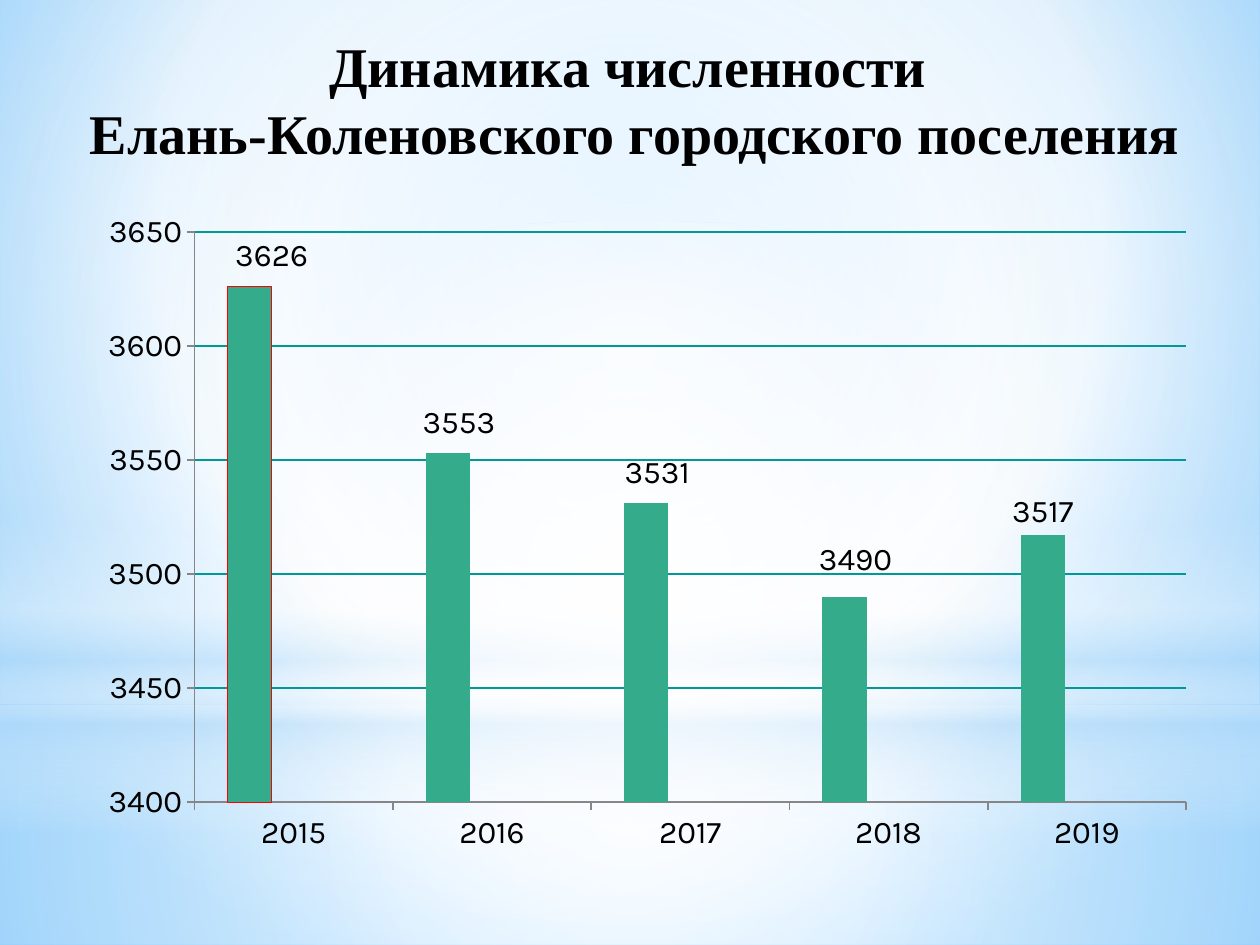
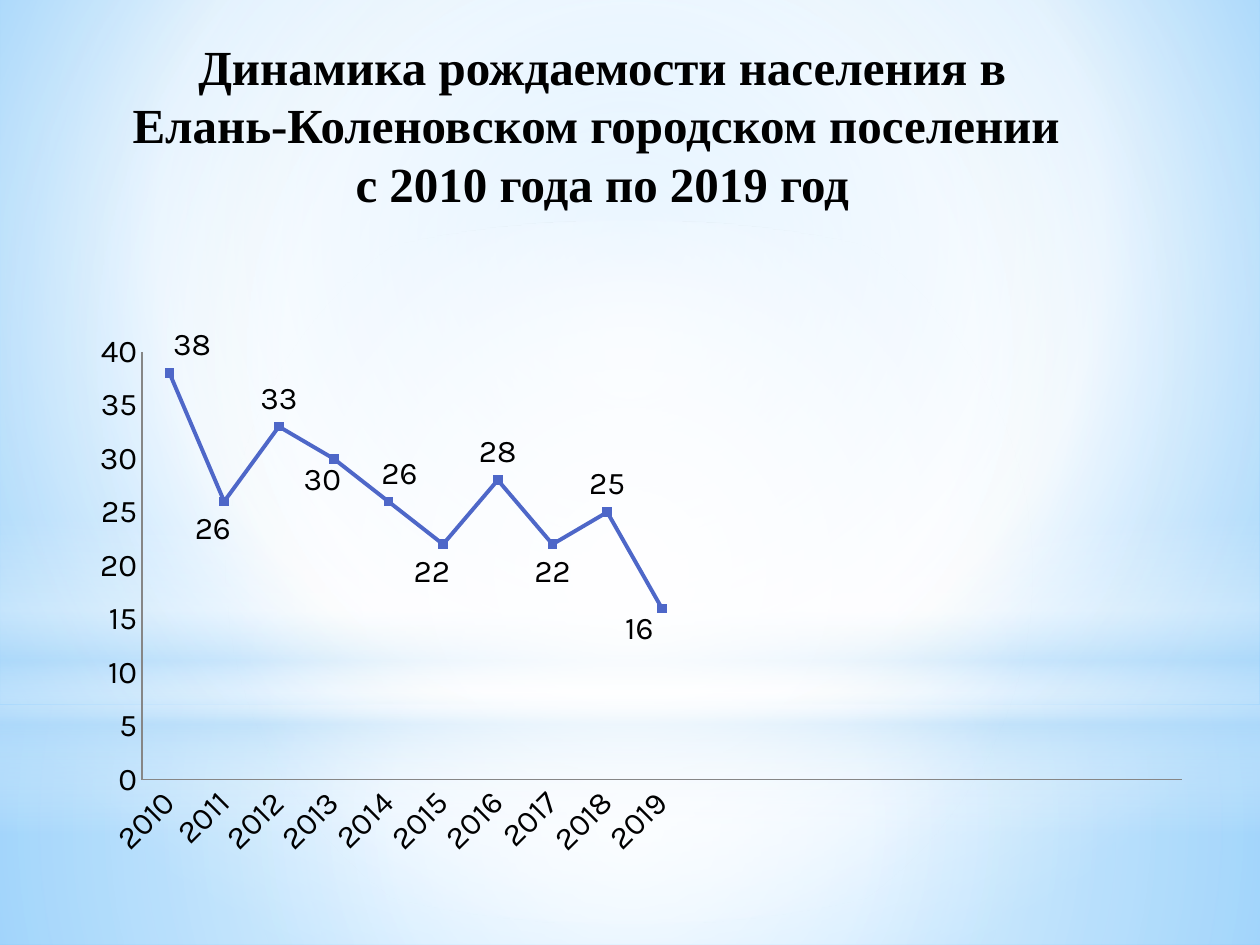
from lxml.etree import SubElement
from pptx import Presentation
from pptx.chart.data import CategoryChartData
from pptx.dml.color import RGBColor
from pptx.enum.chart import (XL_CHART_TYPE, XL_LABEL_POSITION, XL_MARKER_STYLE,
                             XL_TICK_LABEL_POSITION, XL_TICK_MARK)
from pptx.enum.shapes import MSO_SHAPE
from pptx.enum.text import MSO_ANCHOR, PP_ALIGN
from pptx.oxml import parse_xml
from pptx.oxml.ns import nsdecls, qn
from pptx.util import Inches, Pt

COLUMNS, ROWS = 10, 7.5
ABOVE, BELOW = XL_LABEL_POSITION.ABOVE, XL_LABEL_POSITION.BELOW
OUTSIDE = XL_LABEL_POSITION.OUTSIDE_END

# Gradient stops: position, colour, opacity (all in percent)
BACKDROP = [(0, "9ED5FF", 100), (60, "FFFFFF", 100), (100, "5BB9FF", 100)]
FLOOR = [(0, "FFFFFF", 91), (37, "FFFFFF", 76), (100, "B4DCFA", 79)]
WALL = [(0, "FFFFFF", 89), (48, "FFFFFF", 62), (100, "B4DCFA", 79)]
HORIZON = [(0, "FFFFFF", 0), (29, "FFFFFF", 30), (45, "B4DCFA", 40),
           (55, "FFFFFF", 26), (65, "B4DCFA", 60), (100, "FFFFFF", 0)]
GLOW = [(0, "FFFFFF", 100), (56, "FFFFFF", 0)]
CENTRE = (50, 50, 50, 50)


def color(value):
    return RGBColor.from_string(value)


def paint_gradient(holder, stops, focus=None):
    """Swap a solid fill for a circular gradient, or a vertical one without focus."""
    stop_xml = "".join(
        f'<a:gs pos="{position * 1000}"><a:srgbClr val="{value}">'
        f'<a:alpha val="{opacity * 1000}"/></a:srgbClr></a:gs>'
        for position, value, opacity in stops)
    if focus:
        left, top, right, bottom = (share * 1000 for share in focus)
        direction = (f'<a:path path="circle"><a:fillToRect l="{left}" t="{top}" '
                     f'r="{right}" b="{bottom}"/></a:path>')
    else:
        direction = '<a:lin ang="5400000" scaled="0"/>'
    gradient = parse_xml(f'<a:gradFill {nsdecls("a")} rotWithShape="1">'
                         f'<a:gsLst>{stop_xml}</a:gsLst>{direction}</a:gradFill>')
    holder.replace(holder.find(qn("a:solidFill")), gradient)


def add_layout(parent, index, **settings):
    """Insert a manual chart layout as the child at the given index."""
    for old in parent.findall(qn("c:layout")):
        parent.remove(old)
    layout = parse_xml(f'<c:layout {nsdecls("c")}><c:manualLayout/></c:layout>')
    for name, value in settings.items():
        SubElement(layout[0], qn(f"c:{name}")).set("val", str(value))
    parent.insert(index, layout)


class Deck:
    title_font, chart_font = "Times New Roman", "Karla"
    text_color, axis_color = "000000", "868686"

    def __init__(self):
        self.presentation = Presentation()
        self.presentation.slide_width = Inches(COLUMNS)
        self.presentation.slide_height = Inches(ROWS)
        self.slide = None

    def box(self, column, row, columns, rows):
        width = self.presentation.slide_width / COLUMNS
        height = self.presentation.slide_height / ROWS
        return (int(column * width), int(row * height),
                int(columns * width), int(rows * height))

    def add_slide(self):
        self.slide = self.presentation.slides.add_slide(
            self.presentation.slide_layouts[6])
        self.slide.background.fill.solid()
        self.slide.background.fill.fore_color.rgb = color("FFFFFF")
        paint_gradient(self.slide.element.find(".//" + qn("p:bgPr")),
                       BACKDROP, (20, 10, 20, 60))
        self.add_band(MSO_SHAPE.RECTANGLE, (0, 5.59, 10, 1.91), FLOOR, CENTRE)
        self.add_band(MSO_SHAPE.RECTANGLE, (0, 0, 10, 5.58), WALL, CENTRE)
        self.add_band(MSO_SHAPE.RECTANGLE, (0, 4.12, 10, 2.5), HORIZON)
        self.add_band(MSO_SHAPE.OVAL, (0, 1.75, 10, 5.58), GLOW, CENTRE)

    def add_band(self, kind, place, stops, focus=None):
        shape = self.slide.shapes.add_shape(kind, *self.box(*place))
        shape.shadow.inherit = False
        shape.line.fill.background()
        shape.fill.solid()
        paint_gradient(shape.element.spPr, stops, focus)

    def add_title(self, place, lines, size, spacing=None):
        frame = self.slide.shapes.add_textbox(*self.box(*place)).text_frame
        frame.word_wrap = True
        frame.vertical_anchor = MSO_ANCHOR.MIDDLE
        paragraph = frame.paragraphs[0]
        paragraph.alignment = PP_ALIGN.CENTER
        if spacing:
            paragraph.line_spacing = Pt(spacing)
        for number, line in enumerate(lines):
            if number:
                paragraph.add_line_break()
            run = paragraph.add_run()
            run.text = line
            run.font.name = self.title_font
            run.font.size = Pt(size)
            run.font.bold = True
            run.font.color.rgb = color(self.text_color)

    def add_chart(self, kind, place, categories, series, plot_area, scale,
                  tick_mark, axis_width):
        data = CategoryChartData()
        data.categories = categories
        for name, values in series:
            data.add_series(name, values)
        chart = self.slide.shapes.add_chart(kind, *self.box(*place), data).chart
        chart.has_title = chart.has_legend = False
        chart.font.name = self.chart_font
        chart.font.size = Pt(18)
        chart.font.color.rgb = color(self.text_color)
        chart.plots[0].vary_by_categories = False

        # Axes
        for axis in (chart.category_axis, chart.value_axis):
            axis.has_major_gridlines = False
            axis.major_tick_mark = tick_mark
            axis.minor_tick_mark = XL_TICK_MARK.NONE
            axis.format.line.color.rgb = color(self.axis_color)
            axis.format.line.width = Pt(axis_width)
        axis = chart.value_axis
        axis.minimum_scale, axis.maximum_scale, axis.major_unit = scale

        # Inner plot area, as shares of the chart
        left, top, width, height = plot_area
        add_layout(chart.element.find(".//" + qn("c:plotArea")), 0,
                   layoutTarget="inner", xMode="edge", yMode="edge",
                   x=left, y=top, w=width, h=height)
        return chart

    def add_value_labels(self, chart, labels):
        """Each label is a position and a shift in shares of the chart."""
        series = chart.plots[0].series[0]
        series.data_labels.show_value = True
        for number, (position, _, _) in enumerate(labels):
            series.points[number].data_label.position = position
        label_elements = chart.element.findall(".//" + qn("c:dLbl"))
        for element, (_, right, down) in zip(label_elements, labels):
            if right or down:
                add_layout(element, 1, x=right, y=down)
        for leader in chart.element.findall(".//" + qn("c:showLeaderLines")):
            leader.set("val", "0")


def add_population_slide(deck):
    deck.add_slide()
    deck.add_title((0.39, 0.16, 9.3, 1.25),
                   ["Динамика численности ",
                    "Елань-Коленовского городского поселения"], 32)
    years = [str(year) for year in range(2015, 2020)]
    no_values = [None] * len(years)
    chart = deck.add_chart(
        XL_CHART_TYPE.COLUMN_CLUSTERED, (0.67, 1.62, 8.75, 5.52), years,
        [("Series 1", [3626, 3553, 3531, 3490, 3517]),
         ("Series 2", no_values), ("Series 3", no_values)],
        (0.1, 0.04, 0.9, 0.82), (3400, 3650, 50), XL_TICK_MARK.OUTSIDE, 1)
    chart.category_axis.tick_label_position = XL_TICK_LABEL_POSITION.LOW
    gridlines = chart.value_axis.major_gridlines.format.line
    gridlines.color.rgb = color("009999")
    gridlines.width = Pt(0.75)

    # Columns, the first one outlined
    plot = chart.plots[0]
    plot.gap_width, plot.overlap = 150, 0
    for series, value in zip(plot.series, ("34AC8B", "5ECCF3", "A7EA52")):
        series.format.fill.solid()
        series.format.fill.fore_color.rgb = color(value)
    first = plot.series[0].points[0].format
    first.fill.solid()
    first.fill.fore_color.rgb = color("34AC8B")
    first.line.color.rgb = color("FF0000")
    first.line.width = Pt(0.5)
    deck.add_value_labels(chart, [
        (OUTSIDE, 0.02, -0.01), (OUTSIDE, 0.01, -0.01), (OUTSIDE, 0.01, -0.01),
        (OUTSIDE, 0.01, -0.02), (OUTSIDE, 0, 0)])


def add_births_slide(deck):
    deck.add_slide()
    deck.add_title((-0.44, 0.24, 10.44, 1.5),
                   ["Динамика рождаемости населения в",
                    "Елань-Коленовском городском поселении ",
                    "с 2010 года по 2019 год"], 28, spacing=33.2)
    births = [38, 26, 33, 30, 26, 22, 28, 22, 25, 16]
    unused = 9
    years = [str(2010 + number) for number in range(len(births))]
    chart = deck.add_chart(
        XL_CHART_TYPE.LINE_MARKERS_STACKED, (0.5, 1.86, 8.97, 5.48),
        years + [""] * unused, [("Series 1", births + [None] * unused)],
        (0.07, 0.17, 0.92, 0.62), (0, 40, 5), XL_TICK_MARK.NONE, 0.75)

    # Slanted years
    chart.category_axis.tick_labels.font.size = Pt(18)
    axis_text = chart.element.find(f".//{qn('c:catAx')}/{qn('c:txPr')}")
    axis_text.find(qn("a:bodyPr")).set("rot", "-2700000")

    # Line and markers
    series = chart.plots[0].series[0]
    series.smooth = False
    series.format.line.color.rgb = color("4E67C8")
    series.format.line.width = Pt(2.25)
    series.marker.style = XL_MARKER_STYLE.SQUARE
    series.marker.size = 5
    series.marker.format.fill.solid()
    series.marker.format.fill.fore_color.rgb = color("4E67C8")
    series.marker.format.line.color.rgb = color("4E67C8")
    deck.add_value_labels(chart, [
        (ABOVE, 0.02, 0), (BELOW, -0.01, 0), (ABOVE, 0, 0),
        (BELOW, -0.01, -0.01), (ABOVE, 0.01, 0), (BELOW, -0.01, 0),
        (ABOVE, 0, 0), (BELOW, 0, 0), (ABOVE, 0, 0), (BELOW, -0.02, -0.01)])


def main():
    deck = Deck()
    add_population_slide(deck)
    add_births_slide(deck)
    deck.presentation.save("out.pptx")


if __name__ == "__main__":
    main()
